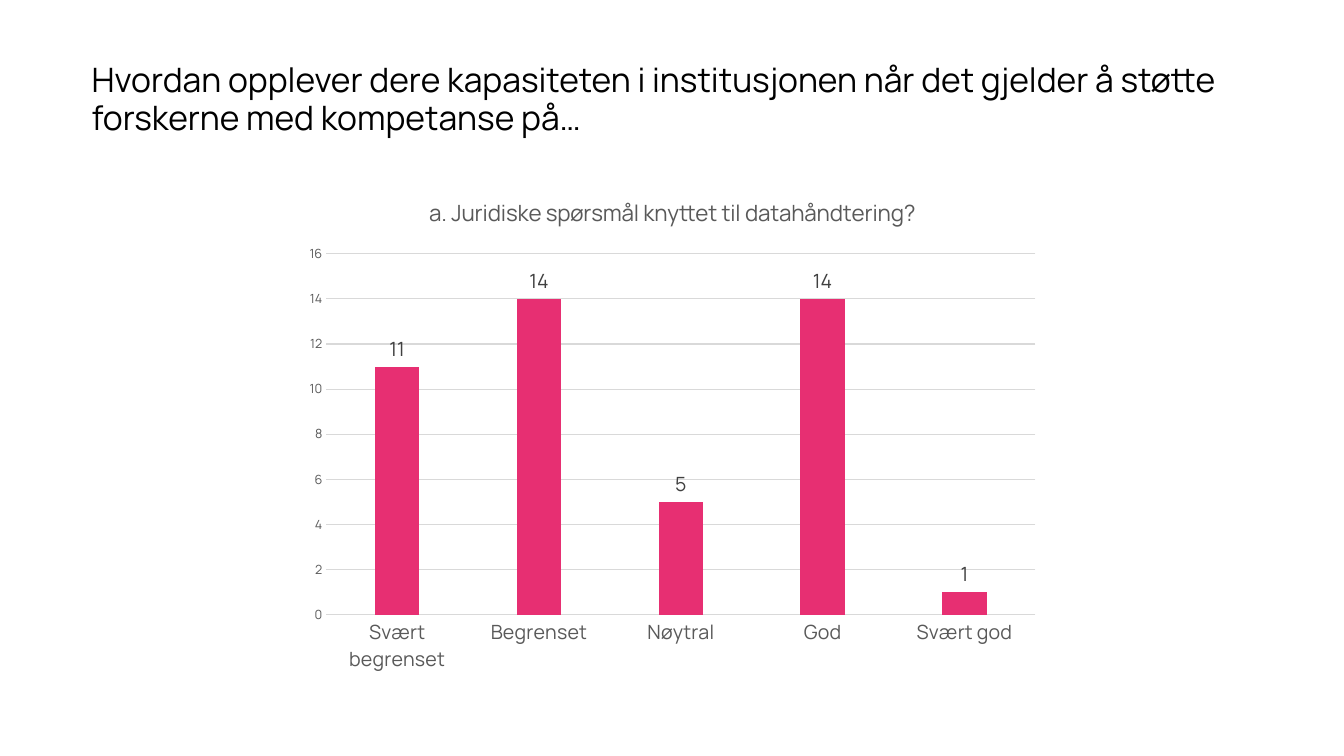
from pptx import Presentation
from pptx.chart.data import CategoryChartData
from pptx.dml.color import RGBColor
from pptx.enum.chart import XL_CHART_TYPE, XL_LABEL_POSITION, XL_TICK_MARK
from pptx.enum.text import MSO_ANCHOR, MSO_AUTO_SIZE, PP_ALIGN
from pptx.util import Inches, Pt

COLORS = {
    "title": "000000",
    "axis": "595959",
    "label": "404040",
    "grid": "D9D9D9",
    "bar": "E72F72",
}


class SlideBuilder:
    font_name = "Manrope"

    def __init__(self, prs):
        self.s = prs.slides.add_slide(prs.slide_layouts[5])

    def color(self, name):
        return RGBColor.from_string(COLORS[name])

    def style_font(self, font, size, color):
        font.name = self.font_name
        font.size = Pt(size)
        font.bold = False
        font.color.rgb = self.color(color)

    def style_line(self, line):
        line.color.rgb = self.color("grid")
        line.width = Pt(0.75)

    def title(self, text, left, top, width, height):
        sp = self.s.shapes.title
        sp.left, sp.top = Inches(left), Inches(top)
        sp.width, sp.height = Inches(width), Inches(height)
        tf = sp.text_frame
        tf.text = text
        tf.word_wrap = True
        tf.auto_size = MSO_AUTO_SIZE.NONE
        tf.vertical_anchor = MSO_ANCHOR.TOP
        tf.margin_left = tf.margin_top = tf.margin_right = tf.margin_bottom = 0
        p = tf.paragraphs[0]
        p.alignment = PP_ALIGN.LEFT
        p.line_spacing = 0.95
        self.style_font(p.font, 24, "title")

    def column_chart(self, title, values, left, top, width, height):
        data = CategoryChartData()
        data.categories = list(values)
        data.add_series("Series 1", list(values.values()))
        chart = self.s.shapes.add_chart(
            XL_CHART_TYPE.COLUMN_CLUSTERED,
            Inches(left), Inches(top), Inches(width), Inches(height), data,
        ).chart
        self.style_font(chart.font, 10, "title")
        chart.has_legend = False
        chart.has_title = True
        tf = chart.chart_title.text_frame
        tf.text = title
        self.style_font(tf.paragraphs[0].font, 16, "axis")
        chart.chart_title.include_in_layout = False

        for axis, size in ((chart.category_axis, 14), (chart.value_axis, 9)):
            axis.major_tick_mark = axis.minor_tick_mark = XL_TICK_MARK.NONE
            self.style_font(axis.tick_labels.font, size, "axis")
        self.style_line(chart.category_axis.format.line)
        value_axis = chart.value_axis
        value_axis.minimum_scale, value_axis.maximum_scale = 0, 16
        value_axis.major_unit = 2
        value_axis.format.line.fill.background()
        self.style_line(value_axis.major_gridlines.format.line)

        plot = chart.plots[0]
        plot.vary_by_categories = False
        plot.gap_width, plot.overlap = 219, -27
        series = plot.series[0]
        series.format.fill.solid()
        series.format.fill.fore_color.rgb = self.color("bar")
        labels = series.data_labels
        labels.show_value = True
        labels.position = XL_LABEL_POSITION.OUTSIDE_END
        self.style_font(labels.font, 14, "label")


def main():
    prs = Presentation()
    prs.slide_width, prs.slide_height = Inches(13.33), Inches(7.5)
    builder = SlideBuilder(prs)
    builder.title(
        "Hvordan opplever dere kapasiteten i institusjonen når det gjelder "
        "å støtte forskerne med kompetanse på…",
        0.91, 0.61, 11.81, 1.34,
    )
    builder.column_chart(
        "a. Juridiske spørsmål knyttet til datahåndtering?",
        {"Svært begrenset": 11, "Begrenset": 14, "Nøytral": 5, "God": 14, "Svært god": 1},
        2.92, 1.75, 7.5, 5.03,
    )
    prs.save("out.pptx")


if __name__ == "__main__":
    main()
